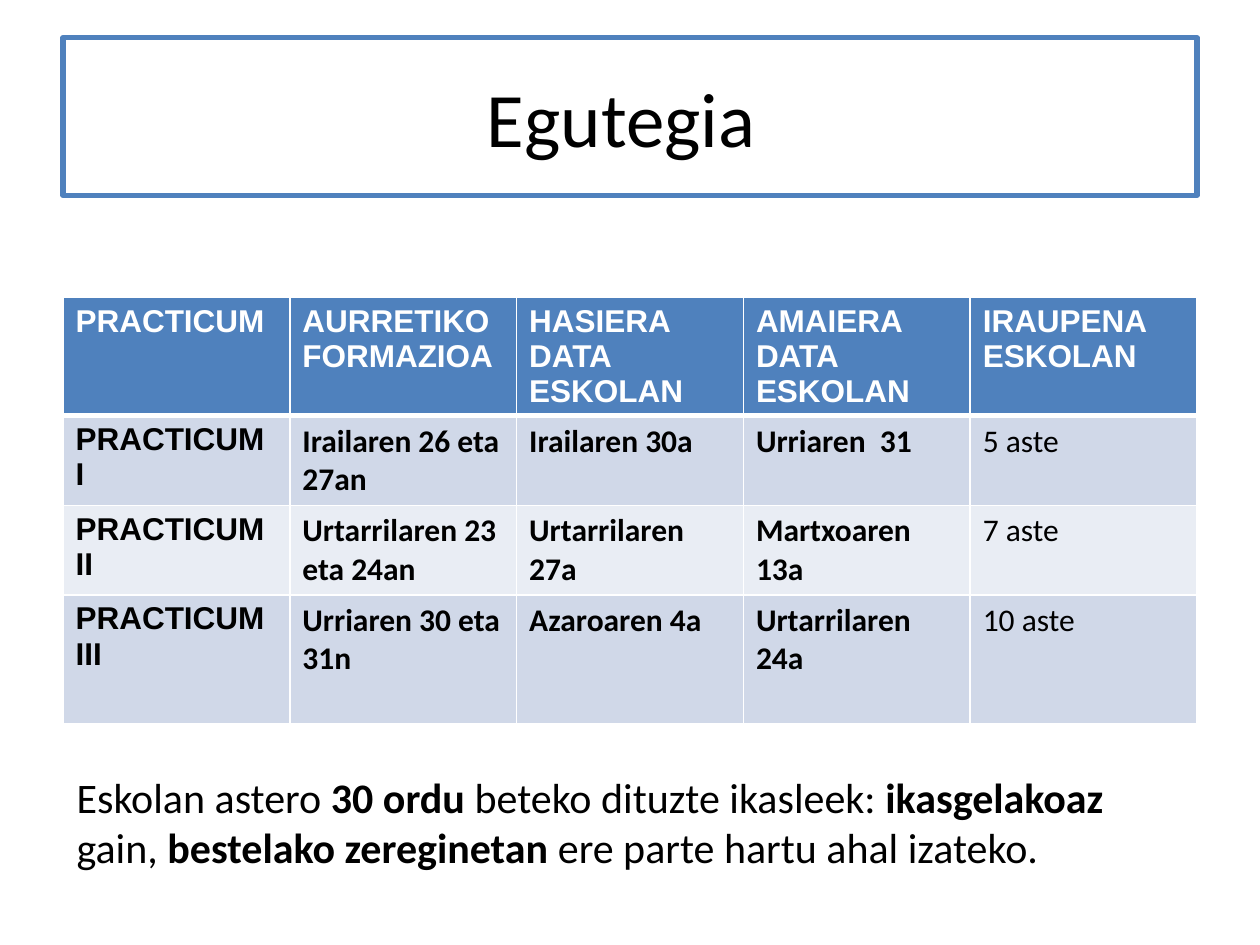
from dataclasses import dataclass
from lxml.etree import SubElement
from pptx import Presentation
from pptx.dml.color import RGBColor
from pptx.enum.shapes import MSO_SHAPE
from pptx.enum.text import MSO_ANCHOR, PP_ALIGN
from pptx.oxml.ns import qn
from pptx.util import Inches, Pt


@dataclass(frozen=True)
class Theme:
    blue: str = "4F81BD"
    odd: str = "D0D8E8"
    even: str = "E9EDF4"
    white: str = "FFFFFF"
    black: str = "000000"
    head: str = "Arial"
    body: str = "Calibri"
    title: int = 44
    note: int = 24
    cell: int = 18


THEME = Theme()

HEADS = ["PRACTICUM", "AURRETIKO FORMAZIOA", "HASIERA DATA ESKOLAN",
         "AMAIERA DATA ESKOLAN", "IRAUPENA\nESKOLAN"]
ROWS = [
    ["PRACTICUM I", "Irailaren 26 eta 27an", "Irailaren 30a",
     "Urriaren  31", "5 aste"],
    ["PRACTICUM II", "Urtarrilaren 23 eta 24an", "Urtarrilaren 27a",
     "Martxoaren 13a", "7 aste"],
    ["PRACTICUM III", "Urriaren 30 eta 31n", "Azaroaren 4a",
     "Urtarrilaren 24a", "10 aste"],
]
HEIGHTS = [0.94, 0.71, 0.71, 1.02]
NOTE = [("Eskolan astero ", False), ("30 ordu ", True),
        ("beteko dituzte ikasleek: ", False), ("ikasgelakoaz ", True),
        ("gain, ", False), ("bestelako zereginetan ", True),
        ("ere parte hartu ahal izateko.", False)]


def write(para, text, size, font=THEME.body, color=THEME.black, bold=False):
    """Add one formatted run to a paragraph."""
    run = para.add_run()
    run.text = text
    run.font.size = Pt(size)
    run.font.name = font
    run.font.bold = bold
    run.font.color.rgb = RGBColor.from_string(color)


def add_title(slide, text):
    box = slide.shapes.add_shape(MSO_SHAPE.RECTANGLE, Inches(0.5), Inches(0.3),
                                 Inches(9), Inches(1.25))
    box.shadow.inherit = False
    box.fill.background()
    box.line.color.rgb = RGBColor.from_string(THEME.blue)
    box.line.width = Pt(3)
    frame = box.text_frame
    frame.vertical_anchor = MSO_ANCHOR.MIDDLE
    para = frame.paragraphs[0]
    para.alignment = PP_ALIGN.CENTER
    write(para, text, THEME.title)


def add_edge(cell, side, width):
    """Draw one white border of a cell."""
    line = SubElement(cell._tc.get_or_add_tcPr(), qn("a:ln" + side),
                      w=str(Pt(width)))
    fill = SubElement(line, qn("a:solidFill"))
    SubElement(fill, qn("a:srgbClr"), val=THEME.white)


def fill_cell(cell, text, fill, top=1, base=1, **form):
    # Borders come before the fill in the cell's XML
    for side, width in (("L", 1), ("R", 1), ("T", top), ("B", base)):
        add_edge(cell, side, width)
    cell.fill.solid()
    cell.fill.fore_color.rgb = RGBColor.from_string(fill)
    frame = cell.text_frame
    for i, part in enumerate(text.split("\n")):
        para = frame.add_paragraph() if i else frame.paragraphs[0]
        write(para, part, THEME.cell, **form)


def add_dates(slide):
    table = slide.shapes.add_table(
        len(HEIGHTS), len(HEADS), Inches(0.5), Inches(2.36),
        Inches(9), Inches(sum(HEIGHTS))).table
    for col in table.columns:
        col.width = Inches(9 / len(HEADS))
    for row, height in zip(table.rows, HEIGHTS):
        row.height = Inches(height)
    # Header row
    for c, text in enumerate(HEADS):
        fill_cell(table.cell(0, c), text, THEME.blue, base=3,
                  font=THEME.head, color=THEME.white, bold=True)
    # Banded rows: first column in the header font, last one not bold
    last = len(HEADS) - 1
    for r, row in enumerate(ROWS, 1):
        for c, text in enumerate(row):
            fill_cell(table.cell(r, c), text,
                      THEME.odd if r % 2 else THEME.even,
                      top=3 if r == 1 else 1,
                      font=THEME.body if c else THEME.head, bold=c < last)


def add_note(slide, parts):
    box = slide.shapes.add_textbox(Inches(0.51), Inches(6.07),
                                   Inches(8.98), Inches(0.91))
    frame = box.text_frame
    frame.word_wrap = True
    for text, bold in parts:
        write(frame.paragraphs[0], text, THEME.note, bold=bold)


def main():
    deck = Presentation()
    deck.slide_width, deck.slide_height = Inches(10), Inches(7.5)
    slide = deck.slides.add_slide(deck.slide_layouts[6])
    add_title(slide, "Egutegia ")
    add_dates(slide)
    add_note(slide, NOTE)
    deck.save("out.pptx")


if __name__ == "__main__":
    main()
